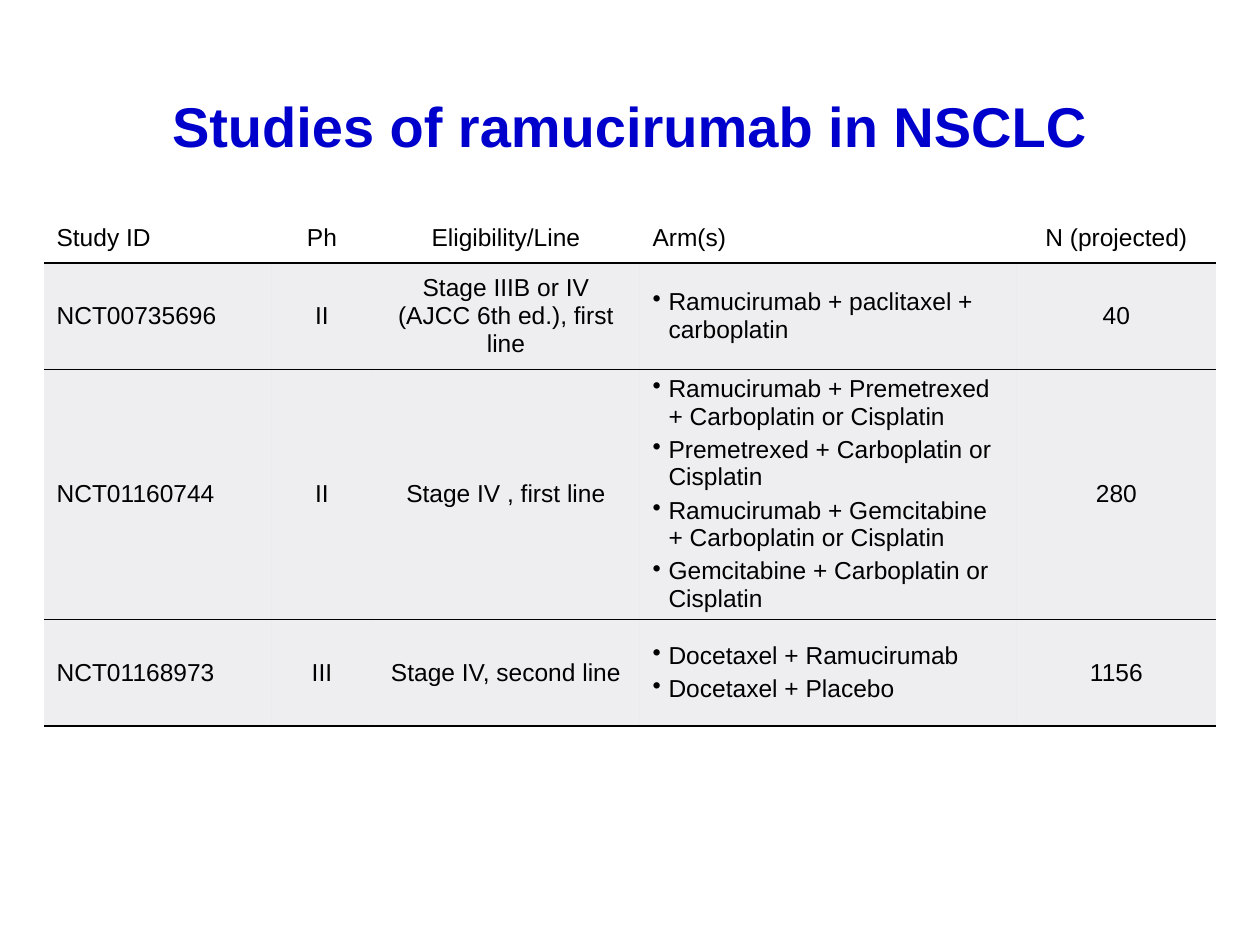
from lxml import etree
from pptx import Presentation
from pptx.dml.color import RGBColor
from pptx.enum.text import MSO_ANCHOR, PP_ALIGN
from pptx.oxml.ns import qn
from pptx.util import Pt

LEFT, CENTER = PP_ALIGN.LEFT, PP_ALIGN.CENTER
MIDDLE, BOTTOM = MSO_ANCHOR.MIDDLE, MSO_ANCHOR.BOTTOM
PX = 914400 // 126
FONT = "Arial"
NO_STYLE = "{2D5ABB26-0587-4C30-8999-92F81FD0307C}"
COLORS = {"title": "0000CC", "text": "000000", "rule": "000000", "band": "AAAAB8"}

column_widths = [228, 100, 268, 377, 199]
row_heights = [49, 106, 248, 107]
alignments = [LEFT, CENTER, CENTER, LEFT, CENTER]
ARMS = 3
studies = [
    ["Study ID", "Ph", "Eligibility/Line", "Arm(s)", "N (projected)"],
    ["NCT00735696", "II", "Stage IIIB or IV (AJCC 6th ed.), first line",
     "Ramucirumab + paclitaxel + carboplatin", "40"],
    ["NCT01160744", "II", "Stage IV , first line",
     "Ramucirumab + Premetrexed + Carboplatin or Cisplatin\n"
     "Premetrexed + Carboplatin or Cisplatin\n"
     "Ramucirumab + Gemcitabine + Carboplatin or Cisplatin\n"
     "Gemcitabine + Carboplatin or Cisplatin", "280"],
    ["NCT01168973", "III", "Stage IV, second line",
     "Docetaxel + Ramucirumab\nDocetaxel + Placebo", "1156"],
]


def style_font(font, size, color, bold=False):
    font.name = FONT
    font.size = Pt(size)
    font.bold = bold
    font.color.rgb = RGBColor.from_string(COLORS[color])


def add_bottom_rule(cell, width):
    rule = etree.Element(qn("a:lnB"), w=str(Pt(width)))
    fill = etree.SubElement(rule, qn("a:solidFill"))
    etree.SubElement(fill, qn("a:srgbClr"), val=COLORS["rule"])
    cell._tc.get_or_add_tcPr().insert(0, rule)


prs = Presentation()
prs.slide_width, prs.slide_height = 1260 * PX, 945 * PX
slide = prs.slides.add_slide(prs.slide_layouts[5])

title = slide.shapes.title
title.left, title.top, title.width, title.height = 44 * PX, 77 * PX, 1172 * PX, 88 * PX
title.text_frame.text = "Studies of ramucirumab in NSCLC"
title.text_frame.vertical_anchor = BOTTOM
heading = title.text_frame.paragraphs[0]
heading.alignment = CENTER
style_font(heading.runs[0].font, 32, "title", True)

table = slide.shapes.add_table(
    len(studies), len(column_widths), 44 * PX, 214 * PX,
    sum(column_widths) * PX, sum(row_heights) * PX).table
table.horz_banding = False
table._tbl.tblPr.find(qn("a:tableStyleId")).text = NO_STYLE
for column, width in zip(table.columns, column_widths):
    column.width = width * PX
for row, height in zip(table.rows, row_heights):
    row.height = height * PX

for r, study in enumerate(studies):
    for c, entry in enumerate(study):
        cell = table.cell(r, c)
        cell.vertical_anchor = MIDDLE
        cell.text_frame.text = entry
        for paragraph in cell.text_frame.paragraphs:
            paragraph.alignment = alignments[c]
            paragraph.space_after = Pt(3.3)
            style_font(paragraph.runs[0].font, 14, "text")
            if r > 0 and c == ARMS:
                properties = paragraph._p.get_or_add_pPr()
                properties.set("marL", str(16 * PX))
                properties.set("indent", str(-16 * PX))
                etree.SubElement(properties, qn("a:buChar"), char="•")
        if r == 0:
            cell.fill.background()
        else:
            cell.fill.solid()
            cell.fill.fore_color.rgb = RGBColor.from_string(COLORS["band"])
            band = cell._tc.tcPr.find(".//" + qn("a:srgbClr"))
            etree.SubElement(band, qn("a:alpha"), val="20000")
        add_bottom_rule(cell, 1 if r in (0, len(studies) - 1) else 0.5)

prs.save("out.pptx")
